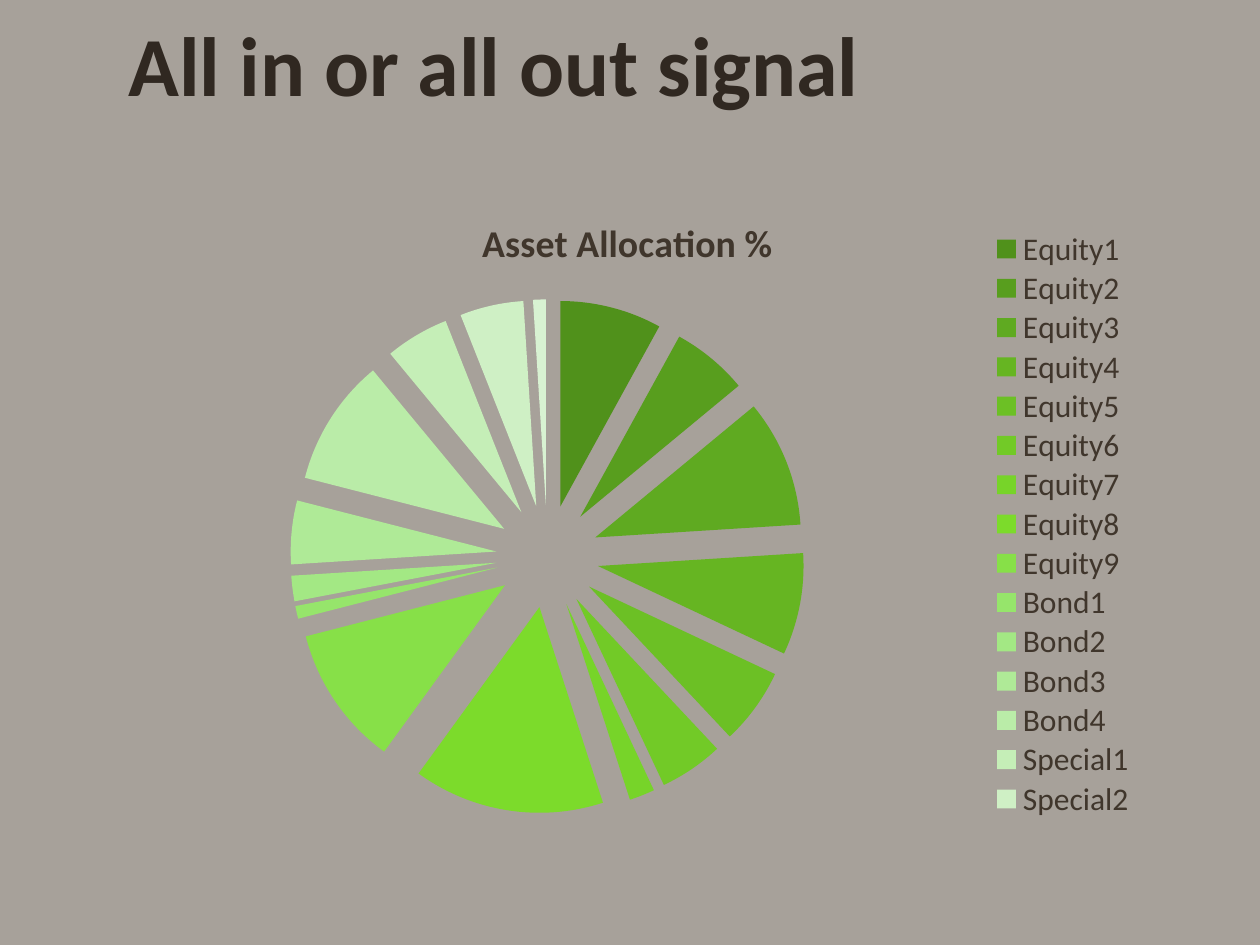
from dataclasses import dataclass

from lxml import etree
from pptx import Presentation
from pptx.chart.data import CategoryChartData
from pptx.dml.color import RGBColor
from pptx.enum.chart import XL_CHART_TYPE as ChartType, XL_LEGEND_POSITION as LegendPosition
from pptx.enum.text import MSO_ANCHOR as Anchor, PP_ALIGN as Align
from pptx.oxml import parse_xml
from pptx.oxml.ns import nsdecls, qn
from pptx.util import Inches, Pt


@dataclass(frozen=True)
class Theme:
    font: str = "Calibri"
    background: str = "A7A19A"
    title_color: str = "302821"
    chart_color: str = "40362C"
    title_size: float = 48
    chart_title_size: float = 21.6
    legend_size: float = 18


THEME = Theme()
EXPLOSION = 25

# Category, percentage, slice colour; the last slice is unnamed
ALLOCATION = [
    ("Equity1", 8, "50911B"),
    ("Equity2", 6, "589E1E"),
    ("Equity3", 10, "5FAA21"),
    ("Equity4", 8, "66B522"),
    ("Equity5", 6, "6CC025"),
    ("Equity6", 5, "72CA27"),
    ("Equity7", 2, "77D429"),
    ("Equity8", 15, "7CDB2B"),
    ("Equity9", 11, "87E048"),
    ("Bond1", 1, "96E56B"),
    ("Bond2", 2, "A3E884"),
    ("Bond3", 5, "AFEA97"),
    ("Bond4", 10, "BAECA8"),
    ("Special1", 5, "C5EEB7"),
    ("Special2", 5, "CFF0C5"),
    ("", 1, "D8F2D2"),
]


def format_font(font, size, color, bold=False):
    font.name = THEME.font
    font.size = Pt(size)
    font.bold = bold
    font.color.rgb = RGBColor.from_string(color)


def write_text(text_frame, text, size, color, bold=False, align=None):
    paragraph = text_frame.paragraphs[0]
    paragraph.alignment = align
    run = paragraph.add_run()
    run.text = text
    format_font(run.font, size, color, bold)


def set_layout(element, index, inner=False, **fractions):
    """Place a chart part by fractions of the chart's width and height."""
    for old_layout in element.findall(qn("c:layout")):
        element.remove(old_layout)
    layout = parse_xml(f"<c:layout {nsdecls('c')}><c:manualLayout/></c:layout>")
    settings = {"layoutTarget": "inner"} if inner else {}
    settings.update({f"{key}Mode": "edge" for key in "xy"})
    settings.update(fractions)
    for name, value in settings.items():
        etree.SubElement(layout[0], qn(f"c:{name}")).set("val", str(value))
    element.insert(index, layout)


def add_title(slide, text):
    title = slide.shapes.title
    title.left, title.top = Inches(0.92), Inches(0)
    title.width, title.height = Inches(8.08), Inches(1)
    title.text_frame.vertical_anchor = Anchor.MIDDLE
    write_text(title.text_frame, text, THEME.title_size, THEME.title_color,
               bold=True, align=Align.LEFT)


def style_slices(series):
    explosion = parse_xml(f'<c:explosion {nsdecls("c")} val="{EXPLOSION}"/>')
    for index, (_, _, color) in enumerate(ALLOCATION):
        fill = series.points[index].format.fill
        fill.solid()
        fill.fore_color.rgb = RGBColor.from_string(color)
    # The explosion stands before the single points in the series
    series._element.find(qn("c:dPt")).addprevious(explosion)


def style_legend(chart):
    chart.has_legend = True
    legend = chart.legend
    legend.position = LegendPosition.RIGHT
    legend.include_in_layout = False
    format_font(legend.font, THEME.legend_size, THEME.chart_color)
    set_layout(legend._element, 1, x=0.85, y=0.06, w=0.14, h=0.92)
    # An unnamed slice needs no legend key
    for index, (name, _, _) in enumerate(ALLOCATION):
        if not name:
            legend._element.insert(1, parse_xml(
                f'<c:legendEntry {nsdecls("c")}><c:idx val="{index}"/>'
                '<c:delete val="1"/></c:legendEntry>'))


def add_pie(slide, title):
    data = CategoryChartData()
    data.categories = [name for name, _, _ in ALLOCATION]
    data.add_series("Series 1", [value for _, value, _ in ALLOCATION])
    chart = slide.shapes.add_chart(
        ChartType.PIE, Inches(0.91), Inches(1.51), Inches(8.18), Inches(5.1), data).chart
    format_font(chart.font, THEME.legend_size, THEME.chart_color)

    # Heading
    chart.has_title = True
    write_text(chart.chart_title.text_frame, title, THEME.chart_title_size,
               THEME.chart_color, bold=True)
    set_layout(chart.chart_title._element, 1, x=0.35, y=0.03)

    # Slices and legend
    plot = chart.plots[0]
    plot.vary_by_categories = True
    style_slices(plot.series[0])
    set_layout(plot._element.getparent(), 0, inner=True, x=0.17, y=0.17, w=0.5, h=0.8)
    style_legend(chart)


def main():
    presentation = Presentation()
    presentation.slide_width, presentation.slide_height = Inches(10), Inches(7.5)
    slide = presentation.slides.add_slide(presentation.slide_layouts[5])
    background = slide.background.fill
    background.solid()
    background.fore_color.rgb = RGBColor.from_string(THEME.background)

    add_pie(slide, "Asset Allocation %")
    add_title(slide, "All in or all out signal")
    presentation.save("out.pptx")


if __name__ == "__main__":
    main()
